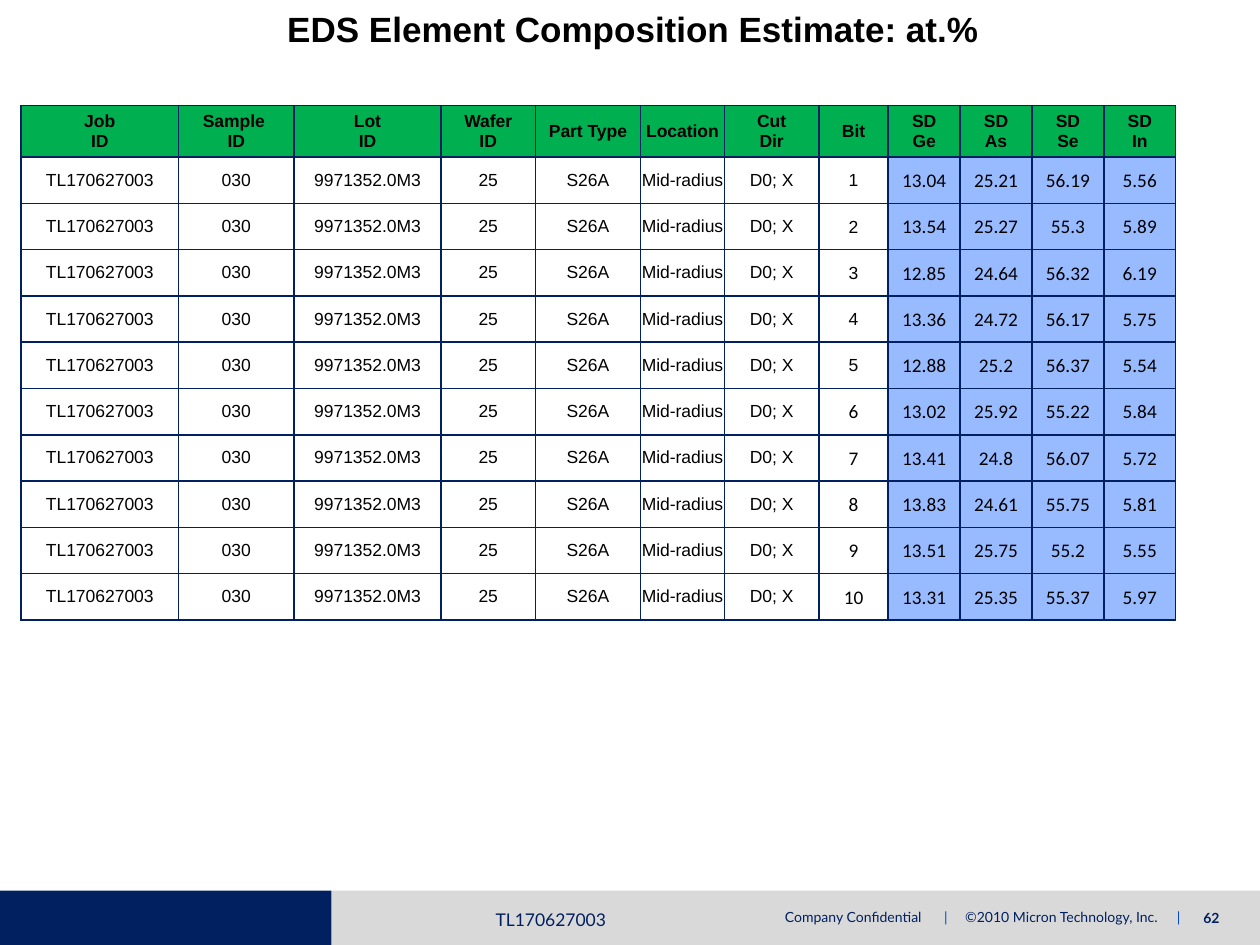
from dataclasses import dataclass
from typing import NamedTuple

from lxml.etree import SubElement
from pptx import Presentation
from pptx.dml.color import RGBColor
from pptx.enum.shapes import MSO_SHAPE as Preset
from pptx.enum.text import MSO_ANCHOR as Anchor, PP_ALIGN as Align
from pptx.oxml.ns import qn
from pptx.util import Pt


@dataclass(frozen=True)
class Theme:
    black: str = "000000"
    navy: str = "002060"
    blue: str = "0042C8"
    gray: str = "D9D9D9"
    green: str = "00B050"
    light_blue: str = "98BAFF"
    sans: str = "Arial"
    number: str = "Calibri"
    footer: str = "Lato"
    title_size: float = 20
    text_size: float = 10
    number_size: float = 11
    small_size: float = 8


class Area(NamedTuple):
    left: float
    top: float
    width: float
    height: float


class Margins(NamedTuple):
    left: float
    top: float
    right: float
    bottom: float


class Column(NamedTuple):
    heading: str
    width: float


class Reading(NamedTuple):
    ge: str
    as_: str
    se: str
    in_: str


THEME = Theme()
BOX_MARGINS = Margins(7.2, 3.6, 7.2, 3.6)
HEADING_MARGINS = Margins(0, 0, 0, 0)
SAMPLE_MARGINS = Margins(0, 7.2, 0, 7.2)
READING_MARGINS = Margins(0.7, 0.7, 0.7, 0)

JOB = "TL170627003"
SAMPLE = [JOB, "030", "9971352.0M3", "25", "S26A", "Mid-radius", "D0; X"]
BIT_COLUMN = len(SAMPLE)
ARIAL_BITS = 5  # later bits are set in the number font
COLUMNS = [
    Column("Job\nID", 90), Column("Sample \nID", 66), Column("Lot\nID", 84),
    Column("Wafer\nID", 54), Column("Part Type", 60), Column("Location", 48),
    Column("Cut\nDir", 54), Column("Bit", 39.6),
    *(Column(f"SD\n{element}", 41.1) for element in ("Ge", "As", "Se", "In")),
]
READINGS = [
    Reading("13.04", "25.21", "56.19", "5.56"),
    Reading("13.54", "25.27", "55.3", "5.89"),
    Reading("12.85", "24.64", "56.32", "6.19"),
    Reading("13.36", "24.72", "56.17", "5.75"),
    Reading("12.88", "25.2", "56.37", "5.54"),
    Reading("13.02", "25.92", "55.22", "5.84"),
    Reading("13.41", "24.8", "56.07", "5.72"),
    Reading("13.83", "24.61", "55.75", "5.81"),
    Reading("13.51", "25.75", "55.2", "5.55"),
    Reading("13.31", "25.35", "55.37", "5.97"),
]
HEADING_HEIGHT, ROW_HEIGHT = 29.5, 26.45


def write(frame, text: str, *, size: float, font: str, color: str = THEME.black,
          bold: bool = False, align=Align.CENTER, accent: dict[str, str] | None = None,
          tabs: tuple[float, ...] = ()) -> None:
    """Write one paragraph per line; tabs split a line into spans, and accent recolours spans."""
    for index, line in enumerate(text.split("\n")):
        para = frame.paragraphs[0] if index == 0 else frame.add_paragraph()
        para.alignment = align
        if tabs:
            stops = SubElement(para._p.get_or_add_pPr(), qn("a:tabLst"))
            for stop in tabs:
                SubElement(stops, qn("a:tab"), pos=str(Pt(stop)), algn="l")
        for place, part in enumerate(line.split("\t")):
            span = para.add_run()
            span.text = f"\t{part}" if place else part
            span.font.size, span.font.name, span.font.bold = Pt(size), font, bold
            span.font.color.rgb = RGBColor.from_string((accent or {}).get(part, color))


def set_margins(target, margins: Margins) -> None:
    target.margin_left, target.margin_top = Pt(margins.left), Pt(margins.top)
    target.margin_right, target.margin_bottom = Pt(margins.right), Pt(margins.bottom)


def add_bar(page, area: Area, color: str) -> None:
    bar = page.shapes.add_shape(Preset.RECTANGLE, *map(Pt, area))
    bar.shadow.inherit = False
    bar.fill.solid()
    bar.fill.fore_color.rgb = RGBColor.from_string(color)
    bar.line.fill.background()


def add_text(page, area: Area, text: str, *, anchor=Anchor.TOP, **style) -> None:
    frame = page.shapes.add_textbox(*map(Pt, area)).text_frame
    frame.word_wrap = True
    frame.vertical_anchor = anchor
    set_margins(frame, BOX_MARGINS)
    write(frame, text, **style)


def add_borders(cell) -> None:
    properties = cell._tc.get_or_add_tcPr()
    for side in ("lnL", "lnR", "lnT", "lnB"):
        line = SubElement(properties, qn(f"a:{side}"), w=str(Pt(1)))
        SubElement(SubElement(line, qn("a:solidFill")), qn("a:srgbClr"), val=THEME.navy)


def fill_cell(cell, text: str, margins: Margins, fill: str | None = None, **style) -> None:
    add_borders(cell)
    if fill:
        cell.fill.solid()
        cell.fill.fore_color.rgb = RGBColor.from_string(fill)
    else:
        cell.fill.background()
    set_margins(cell, margins)
    cell.vertical_anchor = Anchor.MIDDLE
    write(cell.text_frame, text, **style)


def add_composition_table(page, left: float, top: float) -> None:
    width = sum(column.width for column in COLUMNS)
    height = HEADING_HEIGHT + ROW_HEIGHT * len(READINGS)
    table = page.shapes.add_table(len(READINGS) + 1, len(COLUMNS),
                                  *map(Pt, Area(left, top, width, height))).table
    label_style = dict(size=THEME.text_size, font=THEME.sans)
    number_style = dict(size=THEME.number_size, font=THEME.number)
    table.rows[0].height = Pt(HEADING_HEIGHT)
    for index, column in enumerate(COLUMNS):
        table.columns[index].width = Pt(column.width)
        fill_cell(table.cell(0, index), column.heading, HEADING_MARGINS, THEME.green,
                  bold=True, **label_style)
    for bit, reading in enumerate(READINGS, start=1):
        table.rows[bit].height = Pt(ROW_HEIGHT)
        for index, text in enumerate(SAMPLE):
            fill_cell(table.cell(bit, index), text, SAMPLE_MARGINS, **label_style)
        fill_cell(table.cell(bit, BIT_COLUMN), str(bit), READING_MARGINS,
                  **(label_style if bit <= ARIAL_BITS else number_style))
        for index, text in enumerate(reading, start=BIT_COLUMN + 1):
            fill_cell(table.cell(bit, index), text, READING_MARGINS, THEME.light_blue,
                      **number_style)


def add_footer(page) -> None:
    add_bar(page, Area(189.4, 509, 530.6, 31), THEME.gray)
    add_bar(page, Area(0, 509, 189.4, 31), THEME.navy)
    style = dict(font=THEME.footer, color=THEME.navy)
    add_text(page, Area(441.4, 515.5, 242, 16.6),
             "Company Confidential\t|\t©2010 Micron Technology, Inc.\t|",
             size=THEME.small_size, align=Align.LEFT, tabs=(91, 103, 224),
             accent={"|": THEME.blue}, **style)
    add_text(page, Area(672.5, 516.2, 39.6, 19.4), "62", size=THEME.small_size,
             bold=True, **style)
    add_text(page, Area(239.8, 515.5, 149.8, 19.4), JOB, size=THEME.text_size,
             anchor=Anchor.MIDDLE, **style)


def main() -> None:
    deck = Presentation()
    deck.slide_width, deck.slide_height = Pt(720), Pt(540)
    page = deck.slides.add_slide(deck.slide_layouts[6])
    add_footer(page)
    add_composition_table(page, 12, 60.3)
    add_text(page, Area(127.4, 0.7, 468.7, 31.7), "EDS Element Composition Estimate: at.%",
             size=THEME.title_size, font=THEME.sans, bold=True)
    deck.save("out.pptx")


if __name__ == "__main__":
    main()
